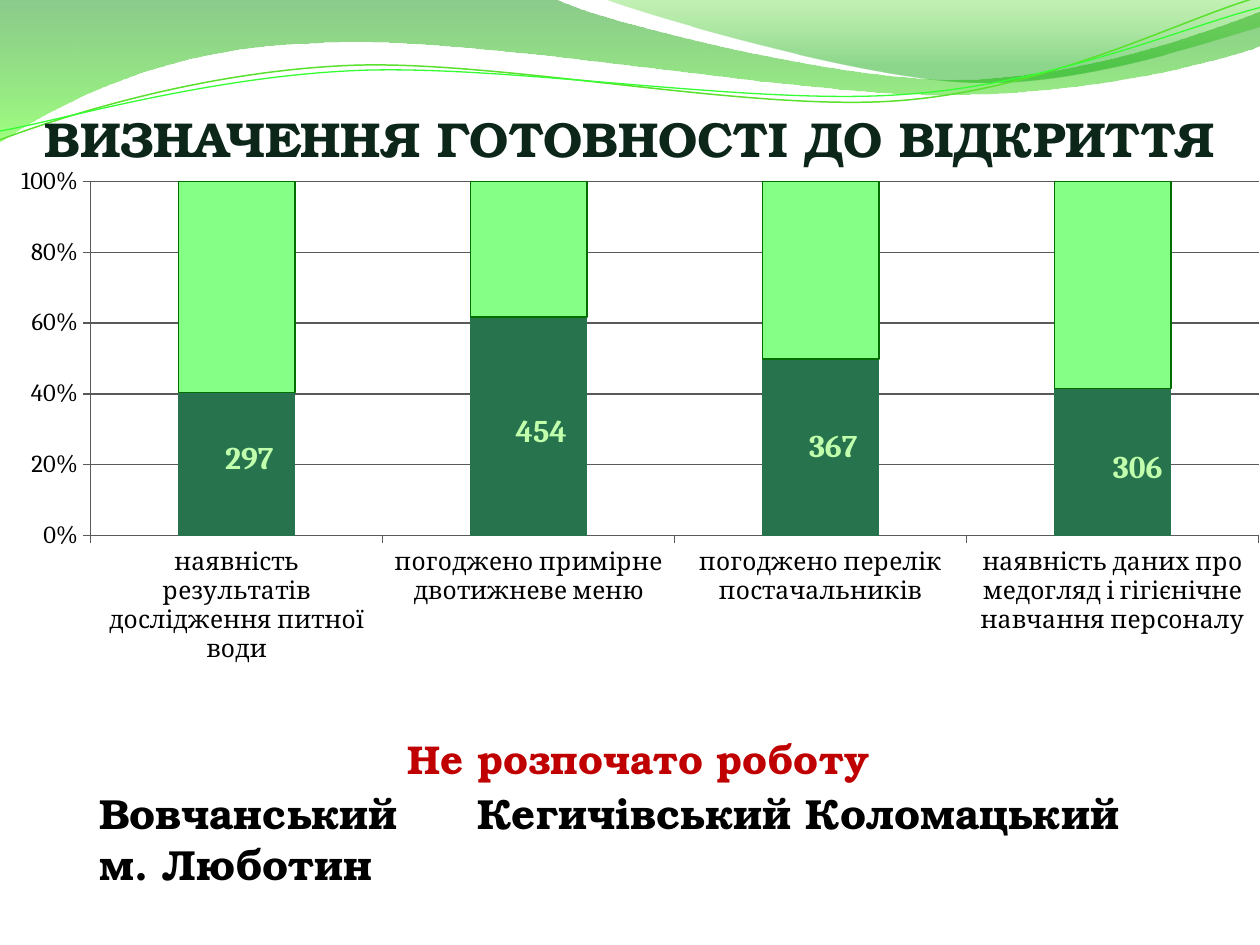
import pptx
import pptx.chart.data
import pptx.dml.color
import pptx.enum.chart
import pptx.enum.text
import pptx.oxml
import pptx.oxml.ns
import pptx.util
from lxml import etree

Inches = pptx.util.Inches
Pt = pptx.util.Pt
qn = pptx.oxml.ns.qn

COLORS = {
    "title": "0D261A", "heading": "C00000", "text": "000000",
    "ready": "26734D", "rest": "85FF85", "rest_line": "006E00",
    "label": "C2FFAD", "axis": "595959",
    "wave_dark": "008B00", "wave_bright": "51FF17",
    "wave_lime": "40D30F", "wave_mid": "00A600",
    "line_olive": "5AE12D", "line_neon": "33FF33",
}
HEADING_FONT = "TeX Gyre Bonum"
CHART_FONT = "Cambria"
# Shift of each value label from the bar centre, as a share of the chart
LABEL_SHIFTS = ((0.01, -0.01), (0.01, 0.01), (0.01, 0), (0.02, 0.01))

# Each wave: a list of steps; 2 numbers make a line, 6 make a Bezier curve
LEFT_WAVE = [
    (0, 0), (4.4, -0.01),
    (4.76, 0.17, 6.64, 0.63, 7.58, 0.63), (8.53, 0.63, 9.58, 0.26, 10, 0.09),
    (10.01, 0.36),
    (9.83, 0.44, 8.7, 0.76, 7.46, 0.75), (6.22, 0.75, 3.82, 0.28, 2.57, 0.34),
    (1.29, 0.36, 0.46, 0.83, -0.01, 1.13), (0, 0),
]
RIGHT_WAVE = [
    (4.79, -0.01),
    (5.09, 0.11, 6.82, 0.62, 7.69, 0.65), (8.56, 0.69, 9.61, 0.32, 10, 0.21),
    (10, 0), (4.79, -0.01),
]
OLIVE_LINE = [
    (0, 1.11), (0.48, 0.93, 1.58, 0.57, 2.77, 0.52),
    (3.95, 0.47, 5.93, 0.89, 7.13, 0.8), (8.33, 0.71, 9.38, 0.15, 9.98, -0.02),
]
NEON_LINE = [
    (0, 1.04), (0.47, 0.96, 1.64, 0.61, 2.83, 0.56),
    (4.03, 0.51, 5.97, 0.84, 7.17, 0.75), (8.36, 0.67, 9.41, 0.21, 10, 0.06),
]


def rgb(name):
    return pptx.dml.color.RGBColor.from_string(COLORS[name])


def style_font(font, size, color, name, bold=False):
    font.size, font.name, font.bold = Pt(size), name, bold
    font.color.rgb = rgb(color)


def add_wave(slide, left, top, steps, closed):
    # Straight outline through the end point of every step
    points = [(left + Inches(step[-2]), top + Inches(step[-1])) for step in steps]
    builder = slide.shapes.build_freeform(*points[0])
    builder.add_line_segments(points[1:], close=closed)
    shape = builder.convert_to_shape()
    shape.shadow.inherit = False
    # Bend the segments that have control points
    segments = list(shape._element.iter(qn("a:lnTo")))
    for segment, step in zip(segments, steps[1:]):
        if len(step) == 6:
            curve = etree.Element(qn("a:cubicBezTo"))
            for x, y in zip(step[::2], step[1::2]):
                etree.SubElement(curve, qn("a:pt"), x=str(left + Inches(x) - shape.left),
                                 y=str(top + Inches(y) - shape.top))
            segment.getparent().replace(segment, curve)
    return shape


def add_header(slide, left, top):
    # Filled waves: stops are position, colour, opacity in percent
    for steps, stops in (
        (LEFT_WAVE, ((0, "wave_dark", 45), (1, "wave_bright", 55))),
        (RIGHT_WAVE, ((0, "wave_lime", 30), (0.8, "wave_mid", 45))),
    ):
        shape = add_wave(slide, left, top, steps, True)
        shape.line.fill.background()
        shape.fill.gradient()
        shape.fill.gradient_angle = 270
        for stop, (position, color, opacity) in zip(shape.fill.gradient_stops, stops):
            stop.position = position
            stop.color.rgb = rgb(color)
        colors = list(shape._element.spPr.iter(qn("a:srgbClr")))
        for element, (position, color, opacity) in zip(colors, stops):
            etree.SubElement(element, qn("a:alpha"), val=str(opacity * 1000))
    # Thin lines
    for steps, color, width in ((OLIVE_LINE, "line_olive", 0.85), (NEON_LINE, "line_neon", 0.75)):
        shape = add_wave(slide, left, top, steps, False)
        shape.fill.background()
        shape.line.color.rgb = rgb(color)
        shape.line.width = Pt(width)


def add_title(slide, left, top, width, height):
    frame = slide.shapes.add_textbox(left, top, width, height).text_frame
    frame.word_wrap = True
    frame.vertical_anchor = pptx.enum.text.MSO_ANCHOR.BOTTOM
    frame.margin_left = frame.margin_right = frame.margin_bottom = 0
    paragraph = frame.paragraphs[0]
    paragraph.text = "ВИЗНАЧЕННЯ ГОТОВНОСТІ ДО ВІДКРИТТЯ"
    paragraph.alignment = pptx.enum.text.PP_ALIGN.CENTER
    style_font(paragraph.font, 28, "title", HEADING_FONT, True)


def make_layout(**settings):
    layout = etree.Element(qn("c:layout"))
    manual = etree.SubElement(layout, qn("c:manualLayout"))
    for tag, value in settings.items():
        etree.SubElement(manual, qn("c:" + tag), val=str(value))
    return layout


def add_readiness_chart(slide, left, top, width, height):
    data = pptx.chart.data.CategoryChartData()
    data.categories = [
        "наявність результатів дослідження питної води",
        "погоджено примірне двотижневе меню",
        "погоджено перелік постачальників",
        "наявність даних про медогляд і гігієнічне навчання персоналу",
    ]
    data.add_series("Series 1", (297, 454, 367, 306))
    data.add_series("Series 2", (439, 282, 369, 430))
    kinds = pptx.enum.chart
    chart = slide.shapes.add_chart(
        kinds.XL_CHART_TYPE.COLUMN_STACKED_100, left, top, width, height, data).chart
    chart.has_legend = chart.has_title = False
    style_font(chart.font, 18, "text", CHART_FONT)

    # Plot area
    plot_area = chart._chartSpace.find(".//" + qn("c:plotArea"))
    for layout in plot_area.findall(qn("c:layout")):
        plot_area.remove(layout)
    plot_area.insert(0, make_layout(layoutTarget="inner", xMode="edge", yMode="edge",
                                    x=0.072, y=0.042, w=0.927, h=0.621))
    plot = chart.plots[0]
    plot.gap_width, plot.overlap = 150, 100
    plot.vary_by_categories = False

    # Axes
    value_axis = chart.value_axis
    value_axis.minimum_scale, value_axis.maximum_scale = 0, 1
    value_axis.major_unit = 0.2
    value_axis.has_major_gridlines = True
    value_axis.tick_labels.number_format = "0%"
    value_axis.tick_labels.number_format_is_linked = False
    for axis in (value_axis, chart.category_axis):
        axis.major_tick_mark = kinds.XL_TICK_MARK.OUTSIDE
        style_font(axis.tick_labels.font, 14, "text", CHART_FONT)
        axis.format.line.color.rgb = rgb("axis")
    value_axis.major_gridlines.format.line.color.rgb = rgb("axis")

    # Series and nudged value labels
    ready, rest = plot.series
    for series, color in ((ready, "ready"), (rest, "rest")):
        series.format.fill.solid()
        series.format.fill.fore_color.rgb = rgb(color)
    rest.format.line.color.rgb = rgb("rest_line")
    rest.format.line.width = Pt(0.75)
    ready.data_labels.show_value = True
    style_font(ready.data_labels.font, 18, "label", CHART_FONT, True)
    for i in range(len(LABEL_SHIFTS)):
        label = ready.points[i].data_label
        label.position = kinds.XL_LABEL_POSITION.CENTER
        style_font(label.font, 18, "label", CHART_FONT, True)
    for element, (x, y) in zip(ready._element.findall(".//" + qn("c:dLbl")), LABEL_SHIFTS):
        element.insert(1, make_layout(x=x, y=y))


def add_not_started(slide, left, top, width, height):
    frame = slide.shapes.add_textbox(left, top, width, height).text_frame
    frame.word_wrap = True
    heading, districts = frame.paragraphs[0], frame.add_paragraph()
    heading.text = "Не розпочато роботу"
    heading.alignment = pptx.enum.text.PP_ALIGN.CENTER
    districts.text = "Вовчанський \t\tКегичівський Коломацький \t\tм. Люботин"
    for paragraph, size, color in ((heading, 23, "heading"), (districts, 24, "text")):
        paragraph.space_before = Pt(3)
        style_font(paragraph.font, size, color, HEADING_FONT, True)
        properties = paragraph._p.get_or_add_pPr()
        properties.set("marL", str(Inches(0.07)))
        properties.set("indent", "0")


def main():
    presentation = pptx.Presentation()
    presentation.slide_width, presentation.slide_height = Inches(10), Inches(7.5)
    slide = presentation.slides.add_slide(presentation.slide_layouts[6])
    add_header(slide, Inches(0), Inches(0))
    add_title(slide, Inches(0), Inches(0.78), Inches(10), Inches(0.55))
    add_readiness_chart(slide, Inches(0), Inches(1.25), Inches(10), Inches(4.53))
    add_not_started(slide, Inches(0.62), Inches(5.78), Inches(8.83), Inches(1.56))
    presentation.save("out.pptx")


if __name__ == "__main__":
    main()
